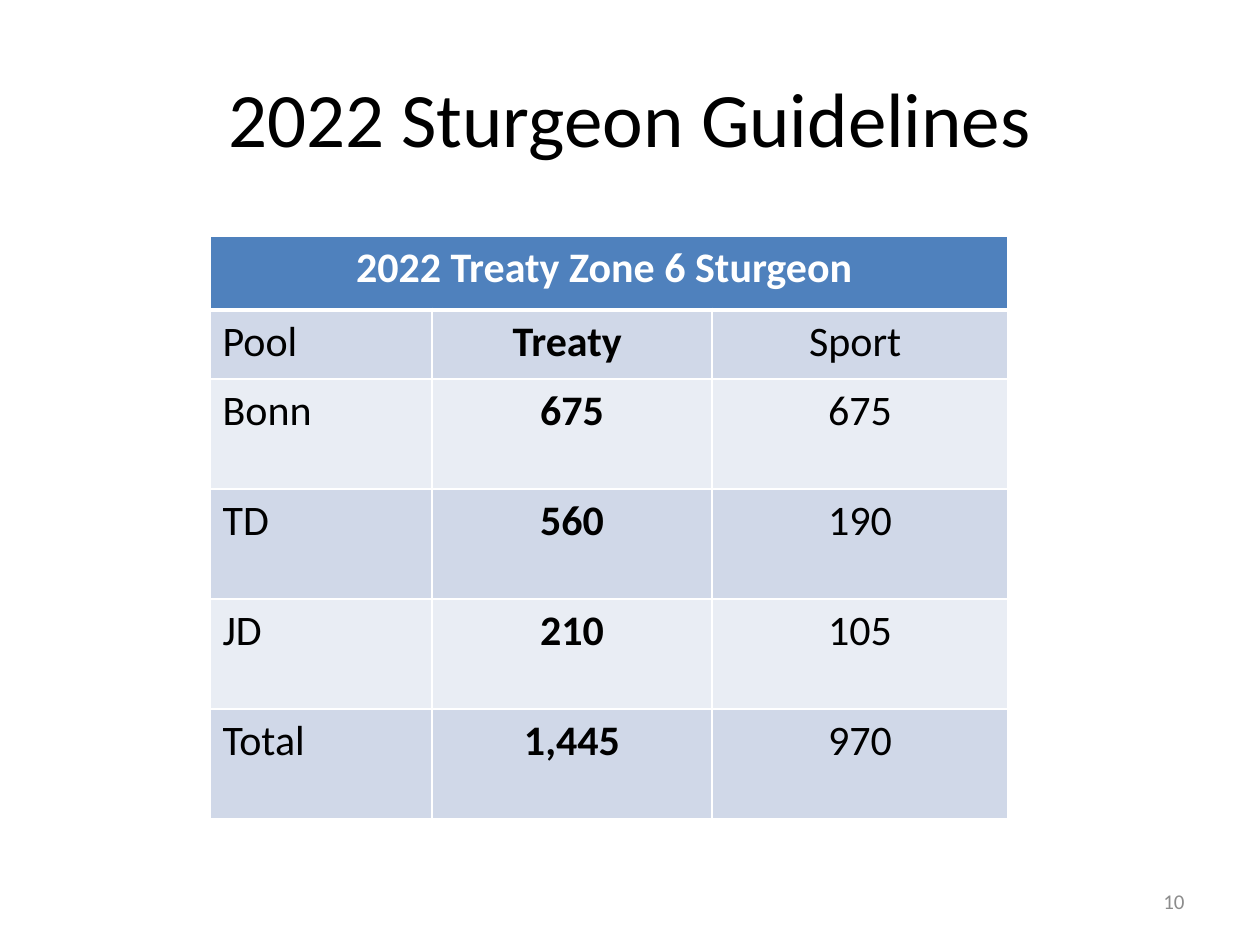
from lxml.etree import SubElement
from pptx import Presentation
from pptx.dml.color import RGBColor
from pptx.enum.text import MSO_ANCHOR as Anchor, PP_ALIGN as Align
from pptx.oxml.ns import qn
from pptx.util import Emu, Pt

# Content
TITLE = "2022 Sturgeon Guidelines"
PAGE_NUMBER = "10"
TABLE_HEADING = "2022 Treaty Zone 6 Sturgeon "
TABLE_ROWS = [
    ("Pool", "Treaty ", "Sport "),
    ("Bonn", "675", "675"),
    ("TD", "560", "190"),
    ("JD", "210", "105"),
    ("Total", "1,445", "970"),
]

# Geometry in px
SLIDE_SIZE = (1260, 945)
TITLE_BOX = (63, 38, 1134, 157)
NUMBER_BOX = (903, 876, 294, 50)
TABLE_ORIGIN = (210, 236)
COLUMN_WIDTHS = (222, 280, 296)
ROW_HEIGHTS = (74, 69) + (110,) * 4

# Look
FONT = "Calibri"
BLACK = RGBColor(0x00, 0x00, 0x00)
WHITE = RGBColor(0xFF, 0xFF, 0xFF)
GREY = RGBColor(0x8C, 0x8C, 0x8C)
HEADING_BLUE = RGBColor(0x4F, 0x81, 0xBD)
BANDS = (RGBColor(0xD0, 0xD8, 0xE8), RGBColor(0xE9, 0xED, 0xF4))
COLUMN_FORMATS = (
    {"align": Align.LEFT, "bold": False},
    {"align": Align.CENTER, "bold": True},
    {"align": Align.CENTER, "bold": False},
)


def px(length):
    return Emu(round(length * 914400 / 126))


def write(frame, text, size, color, align, bold=False):
    paragraph = frame.paragraphs[0]
    paragraph.alignment = align
    run = paragraph.add_run()
    run.text = text
    for name, value in {"name": FONT, "size": Pt(size), "bold": bold}.items():
        setattr(run.font, name, value)
    run.font.color.rgb = color


def add_text(slide, box, text, size, color, align):
    frame = slide.shapes.add_textbox(*map(px, box)).text_frame
    frame.word_wrap = True
    frame.vertical_anchor = Anchor.MIDDLE
    write(frame, text, size, color, align)


def format_cell(cell, fill, top=1, bottom=1):
    properties = cell._tc.get_or_add_tcPr()
    for side, width in {"L": 1, "R": 1, "T": top, "B": bottom}.items():
        line = SubElement(properties, qn(f"a:ln{side}"), w=str(Pt(width)))
        solid = SubElement(line, qn("a:solidFill"))
        SubElement(solid, qn("a:srgbClr"), val=str(WHITE))
    cell.fill.solid()
    cell.fill.fore_color.rgb = fill


def add_guideline_table(slide):
    size = (sum(COLUMN_WIDTHS), sum(ROW_HEIGHTS))
    table = slide.shapes.add_table(
        len(ROW_HEIGHTS), len(COLUMN_WIDTHS), *map(px, TABLE_ORIGIN + size)
    ).table
    table.first_row = table.horz_banding = False
    for column, width in zip(table.columns, COLUMN_WIDTHS):
        column.width = px(width)
    for row, height in zip(table.rows, ROW_HEIGHTS):
        row.height = px(height)

    # Heading across all columns
    heading = table.cell(0, 0)
    heading.merge(table.cell(0, len(COLUMN_WIDTHS) - 1))
    for cell in table.rows[0].cells:
        format_cell(cell, HEADING_BLUE, bottom=3)
    write(heading.text_frame, TABLE_HEADING, 24, WHITE, Align.CENTER, True)

    # Banded body rows
    for index, values in enumerate(TABLE_ROWS):
        for column, (text, style) in enumerate(zip(values, COLUMN_FORMATS)):
            cell = table.cell(index + 1, column)
            format_cell(cell, BANDS[index % 2], top=3 if index == 0 else 1)
            write(cell.text_frame, text, 24, BLACK, **style)


def main():
    presentation = Presentation()
    presentation.slide_width, presentation.slide_height = map(px, SLIDE_SIZE)
    slide = presentation.slides.add_slide(presentation.slide_layouts[6])
    add_text(slide, TITLE_BOX, TITLE, 44, BLACK, Align.CENTER)
    add_guideline_table(slide)
    add_text(slide, NUMBER_BOX, PAGE_NUMBER, 12, GREY, Align.RIGHT)
    presentation.save("out.pptx")


if __name__ == "__main__":
    main()
